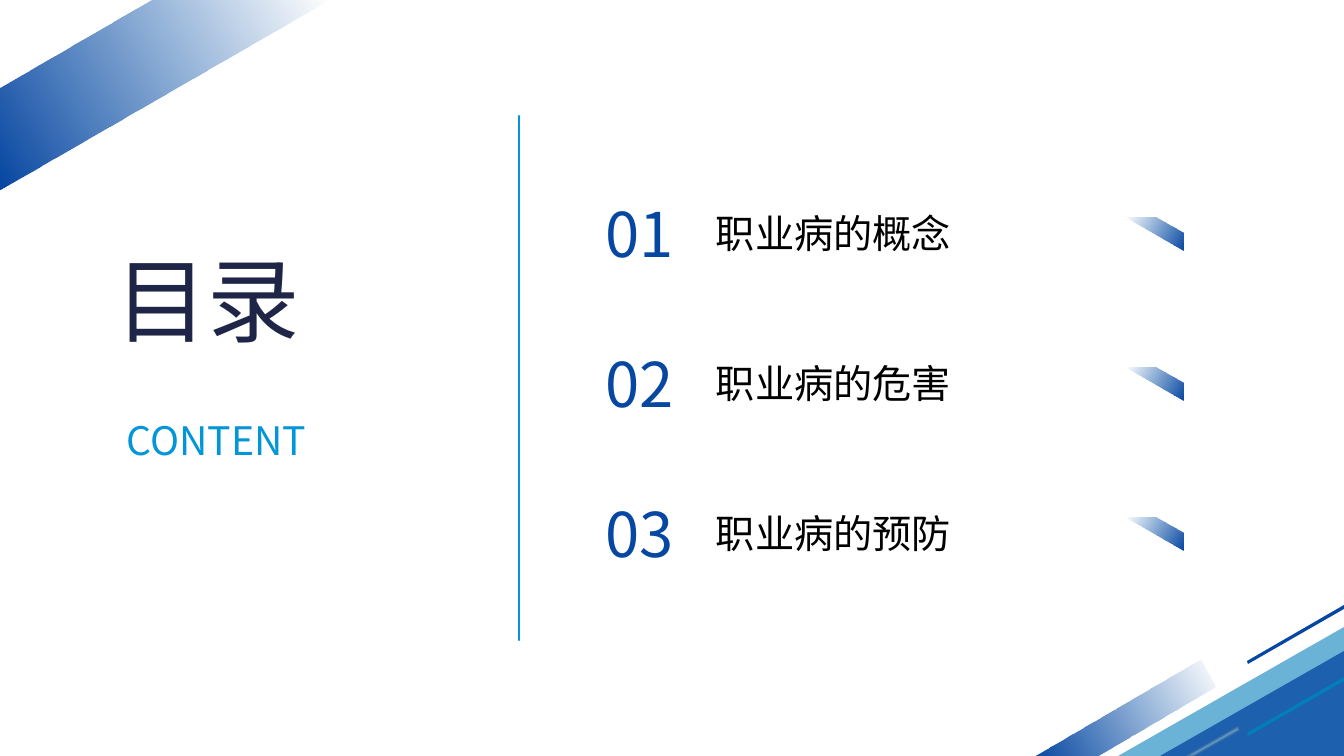
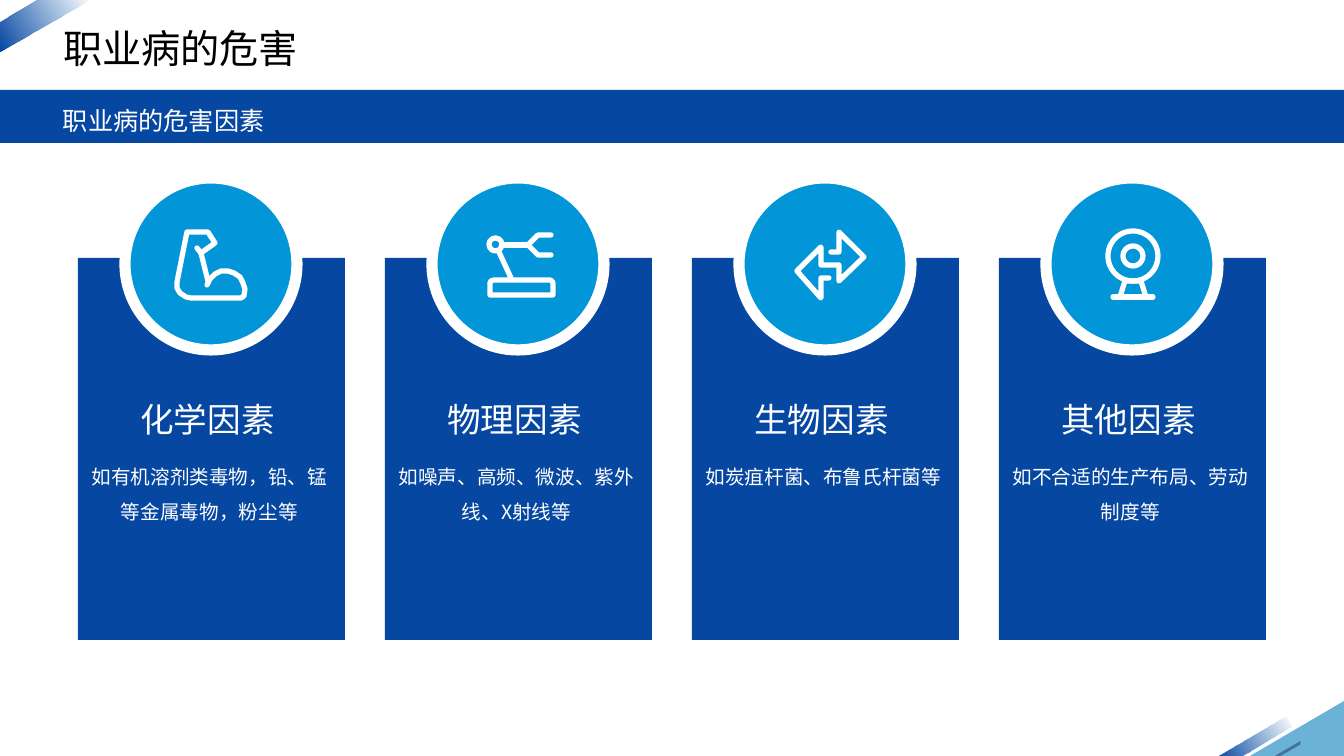
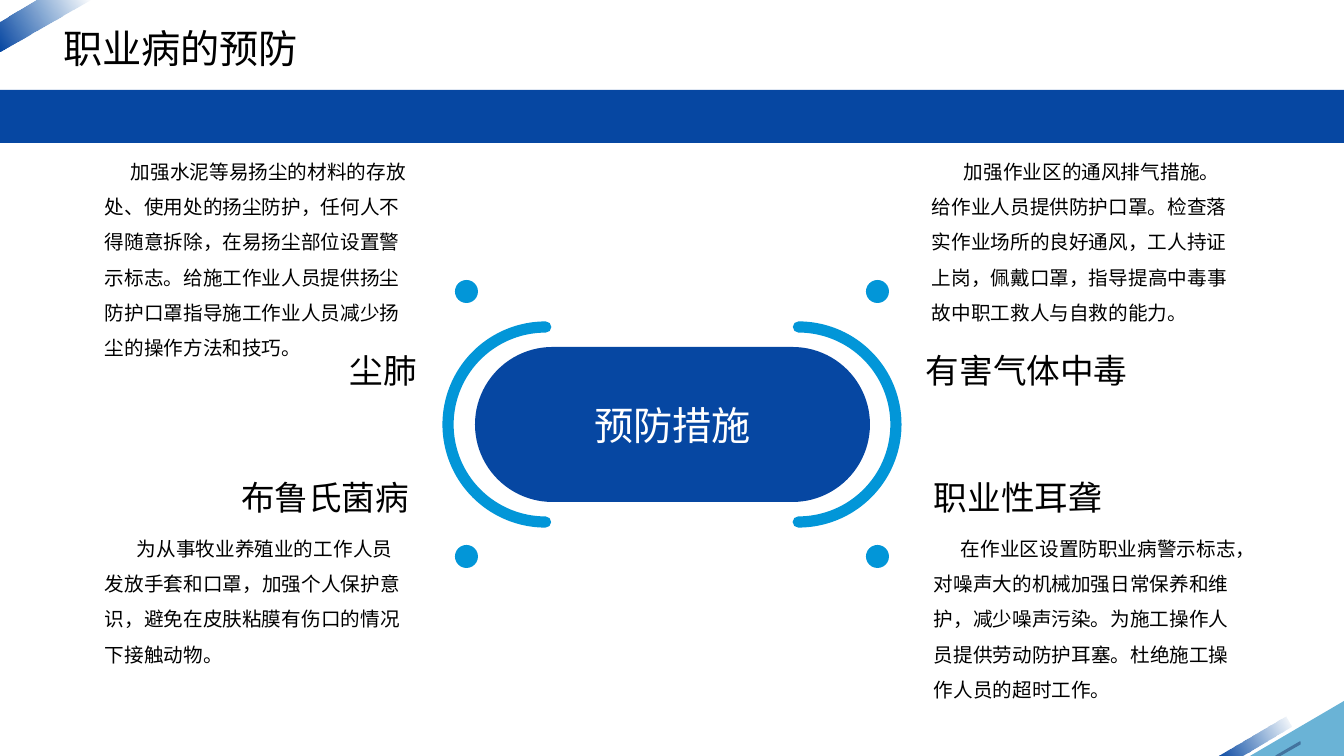
from dataclasses import dataclass

from lxml import etree
from pptx import Presentation
from pptx.dml.color import RGBColor
from pptx.enum.shapes import MSO_CONNECTOR, MSO_SHAPE
from pptx.enum.text import MSO_ANCHOR, MSO_AUTO_SIZE, PP_ALIGN
from pptx.oxml.ns import qn
from pptx.util import Pt

LEFT, CENTER, RIGHT = PP_ALIGN.LEFT, PP_ALIGN.CENTER, PP_ALIGN.RIGHT
TOP, MIDDLE = MSO_ANCHOR.TOP, MSO_ANCHOR.MIDDLE
RECT, OVAL = MSO_SHAPE.RECTANGLE, MSO_SHAPE.OVAL
PILL, ARC = MSO_SHAPE.ROUNDED_RECTANGLE, MSO_SHAPE.ARC
STRAIGHT = MSO_CONNECTOR.STRAIGHT

W, H = 1344, 756
PX = 12192000 / W


@dataclass(frozen=True)
class Theme:
    font: str = "Noto Sans CJK SC"
    blue: str = "0647A2"
    fade: str = "014EA6"
    sky: str = "0296D8"
    teal: str = "027FBA"
    steel: str = "5B9BD5"
    steel_edge: str = "43739E"
    navy: str = "1E2546"
    black: str = "000000"
    white: str = "FFFFFF"
    cover: int = 66
    number: int = 44
    title: int = 28
    heading: int = 24
    subtitle: int = 18
    body: int = 14


T = Theme()


def text(s, box, string, size=T.body, color=T.black, align=LEFT, spacing=1.0,
         indent=0, anchor=TOP, sp=None):
    box = [round(v * PX) for v in box]
    if sp is None:
        sp = s.shapes.add_textbox(*box)
    sp.left, sp.top, sp.width, sp.height = box
    tf = sp.text_frame
    tf.word_wrap = True
    tf.auto_size = MSO_AUTO_SIZE.NONE
    tf.vertical_anchor = anchor
    p = tf.paragraphs[0]
    p.alignment = align
    p.line_spacing = spacing
    if indent:
        p._p.get_or_add_pPr().set("indent", str(round(indent * PX)))
    r = p.add_run()
    r.text = string
    r.font.size = Pt(size)
    r.font.bold = False
    r.font.color.rgb = RGBColor.from_string(color)
    r.font.name = T.font
    etree.SubElement(r._r.rPr, qn("a:ea"), typeface=T.font)


def paint(sp, fill=None, alpha=100, fade=None, line=None, width=1):
    spPr = sp._element.spPr
    if fade is not None:
        sp.fill.gradient()
        sp.fill.gradient_angle = fade
        for stop, color in zip(sp.fill.gradient_stops, (T.fade, T.blue)):
            stop.color.rgb = RGBColor.from_string(color)
        etree.SubElement(spPr.find(".//" + qn("a:srgbClr")), qn("a:alpha"), val="0")
    elif fill:
        sp.fill.solid()
        sp.fill.fore_color.rgb = RGBColor.from_string(fill)
        if alpha < 100:
            etree.SubElement(spPr.find(".//" + qn("a:srgbClr")), qn("a:alpha"),
                             val=str(alpha * 1000))
    elif hasattr(sp, "fill"):
        sp.fill.background()
    if line:
        sp.line.color.rgb = RGBColor.from_string(line)
        sp.line.width = Pt(width)
        ln = spPr.find(qn("a:ln"))
        ln.set("cap", "rnd")
        etree.SubElement(ln, qn("a:round"))
    else:
        sp.line.fill.background()
    etree.SubElement(spPr, qn("a:effectLst"))


prs = Presentation()
prs.slide_width, prs.slide_height = round(W * PX), round(H * PX)
contents, hazards, prevention = [
    prs.slides.add_slide(prs.slide_layouts[5]) for _ in range(3)]

titles = [
    (contents, (105, 238, 226, 122), "目录", T.cover, T.navy),
    (hazards, (53, 19, 317, 57), "职业病的危害", T.title, T.black),
    (prevention, (53, 19, 317, 57), "职业病的预防", T.title, T.black),
]
for s, box, string, size, color in titles:
    text(s, box, string, size=size, color=color, sp=s.shapes.title)

up = dict(fade=210)
down = dict(fade=330)
steel = dict(fill=T.steel, line=T.steel_edge)
icon = dict(line=T.white, width=3.75)

outlines = [
    (contents, [(152, 0), (330, 0), (0, 190), (0, 88)], up),
    (contents, [(1344, 627), (1344, 756), (1118, 756)], dict(fill=T.teal, alpha=59)),
    (contents, [(1344, 651), (1344, 756), (1160, 756)], dict(fill=T.blue, alpha=76)),
    (contents, [(1344, 605), (1344, 609), (1248, 664), (1247, 661)], dict(fill=T.blue)),
    (contents, [(1201, 660), (1216, 687), (1097, 756), (1034, 756)], up),
    (contents, [(1344, 677), (1344, 681), (1248, 736), (1247, 733)], dict(fill=T.teal)),
    (contents, [(1238, 727), (1239, 730), (1193, 756), (1187, 756)], steel),
]

rows = ["职业病的概念", "职业病的危害", "职业病的预防"]
for i, label in enumerate(rows):
    y = 191 + 150 * i
    text(contents, (574, y, 132, 85), f"{i + 1:02}", size=T.number, color=T.blue,
         align=CENTER)
    text(contents, (706, y + 13, 317, 57), label, size=T.title)
    chip = [(1157, y + 27), (1126, y + 27), (1184, y + 60), (1184, y + 42)]
    outlines.append((contents, chip, down))
text(contents, (117, 411, 225, 57), "CONTENT", size=T.title, color=T.sky)

for s in (hazards, prevention):
    paint(s.shapes.add_shape(RECT, 0, round(90 * PX), round(W * PX), round(53 * PX)),
          fill=T.blue)
    outlines += [
        (s, [(37, 0), (91, 0), (0, 52), (0, 22)], up),
        (s, [(1344, 701), (1344, 756), (1250, 756)], dict(fill=T.teal, alpha=59)),
        (s, [(1285, 717), (1291, 727), (1241, 756), (1217, 756)], up),
        (s, [(1300, 742), (1300, 744), (1279, 756), (1276, 756)], steel),
    ]

text(hazards, (53, 85, 590, 55), "职业病的危害因素", size=T.subtitle, color=T.white,
     spacing=1.5)
cards = [
    ("化学因素", "如有机溶剂类毒物，铅、锰等金属毒物，粉尘等"),
    ("物理因素", "如噪声、高频、微波、紫外线、X射线等"),
    ("生物因素", "如炭疽杆菌、布鲁氏杆菌等"),
    ("其他因素", "如不合适的生产布局、劳动制度等"),
]
shapes = []
for i, (heading, body) in enumerate(cards):
    x = 78 + 307 * i
    shapes += [
        (hazards, RECT, (x, 258, 267, 382), dict(fill=T.blue)),
        (hazards, OVAL, (x + 47, 178, 172, 172),
         dict(fill=T.sky, line=T.white, width=8)),
    ]
shapes += [
    (hazards, OVAL, (489, 238, 13, 13), icon),
    (hazards, OVAL, (1108, 231, 50, 50), icon),
    (hazards, OVAL, (1123, 246, 20, 20), icon),
]
for x in (455, 866):
    for y in (280, 545):
        shapes.append((prevention, OVAL, (x, y, 23, 23), dict(fill=T.sky)))
for s, kind, box, style in shapes:
    paint(s.shapes.add_shape(kind, *[round(v * PX) for v in box]), **style)

for i, (heading, body) in enumerate(cards):
    x = 78 + 307 * i
    text(hazards, (x - 4, 394, 267, 50), heading, size=T.heading, color=T.white,
         align=CENTER)
    text(hazards, (x - 2, 448, 267, 82), body, color=T.white, align=CENTER, spacing=1.5)

outlines += [
    (hazards, [(1125, 281), (1120, 297), (1146, 297), (1141, 281)], icon),
    (hazards, [(490, 283), (491, 281), (494, 280), (550, 280), (552, 281), (553, 283),
               (553, 295), (490, 295)], icon),
]
for s, points, style in outlines:
    fb = s.shapes.build_freeform(*points[0], scale=PX)
    fb.add_line_segments(points[1:], close=True)
    paint(fb.convert_to_shape(), **style)

arm = [(207, 285), (210, 279), (215, 274), (221, 271), (228, 271), (234, 273),
       (240, 277), (243, 283), (245, 289), (244, 296), (241, 298), (191, 298),
       (186, 297), (180, 293), (177, 288), (177, 282), (187, 232), (208, 232),
       (215, 243), (201, 253), (197, 248)]
claw = [(551, 255), (538, 255), (528, 245), (538, 235), (551, 235)]
arrows = [(831, 252), (839, 252), (839, 232), (864, 257), (839, 281), (839, 265),
          (821, 265), (821, 247), (797, 271), (821, 298), (821, 278), (829, 278)]
for points in (arm, claw, arrows):
    fb = hazards.shapes.build_freeform(*points[0], scale=PX)
    fb.add_line_segments(points[1:], close=False)
    paint(fb.convert_to_shape(), **icon)

lines = [
    (contents, (519, 116, 519, 640), dict(line=T.sky, width=1.75)),
    (hazards, (201, 253, 208, 281), icon),
    (hazards, (502, 245, 528, 245), icon),
    (hazards, (499, 252, 512, 280), icon),
    (hazards, (1113, 297, 1153, 297), icon),
]
for s, ends, style in lines:
    paint(s.shapes.add_connector(STRAIGHT, *[round(v * PX) for v in ends]), **style)

pill_box = (475, 347, 395, 155)
pill = prevention.shapes.add_shape(PILL, *[round(v * PX) for v in pill_box])
pill.adjustments[0] = 0.5
paint(pill, fill=T.blue)
text(prevention, pill_box, "预防措施", size=T.title, color=T.white, align=CENTER,
     anchor=MIDDLE, sp=pill)
for x, rotation in ((701, 0), (448, 180)):
    sp = prevention.shapes.add_shape(ARC, *[round(v * PX) for v in (x, 327, 195, 195)])
    sp.adjustments[0], sp.adjustments[1] = 162, 54.07
    sp.rotation = rotation
    paint(sp, line=T.sky, width=8)

measures = [
    ("尘肺", (142, 345), RIGHT, (95, 143, 224), 26,
     "加强⽔泥等易扬尘的材料的存放处、使⽤处的扬尘防护，任何⼈不得随意拆除，在易扬尘部位设置警⽰标志。给施⼯作业⼈员提供扬尘防护⼝罩指导施⼯作业⼈员减少扬尘的操作⽅法和技巧。"),
    ("有害气体中毒", (916, 345), LEFT, (922, 143, 188), 32,
     "加强作业区的通风排⽓措施。给作业⼈员提供防护⼝罩。检查落实作业场所的良好通风，⼯⼈持证上岗，佩戴⼝罩，指导提⾼中毒事故中职⼯救⼈与⾃救的能⼒。"),
    ("布鲁氏菌病", (134, 472), RIGHT, (95, 520, 152), 32,
     "为从事牧业养殖业的工作人员发放手套和口罩，加强个人保护意识，避免在皮肤粘膜有伤口的情况下接触动物。"),
    ("职业性耳聋", (924, 472), LEFT, (924, 520, 188), 27,
     "在作业区设置防职业病警⽰标志，对噪声⼤的机械加强⽇常保养和维护，减少噪声污染。为施⼯操作⼈员提供劳动防护⽿塞。杜绝施⼯操作⼈员的超时⼯作。"),
]
for heading, place, align, (x, y, height), indent, body in measures:
    text(prevention, (*place, 285, 50), heading, size=T.heading, align=align)
    text(prevention, (x, y, 326, height), body, spacing=1.5, indent=indent)

prs.save("out.pptx")
